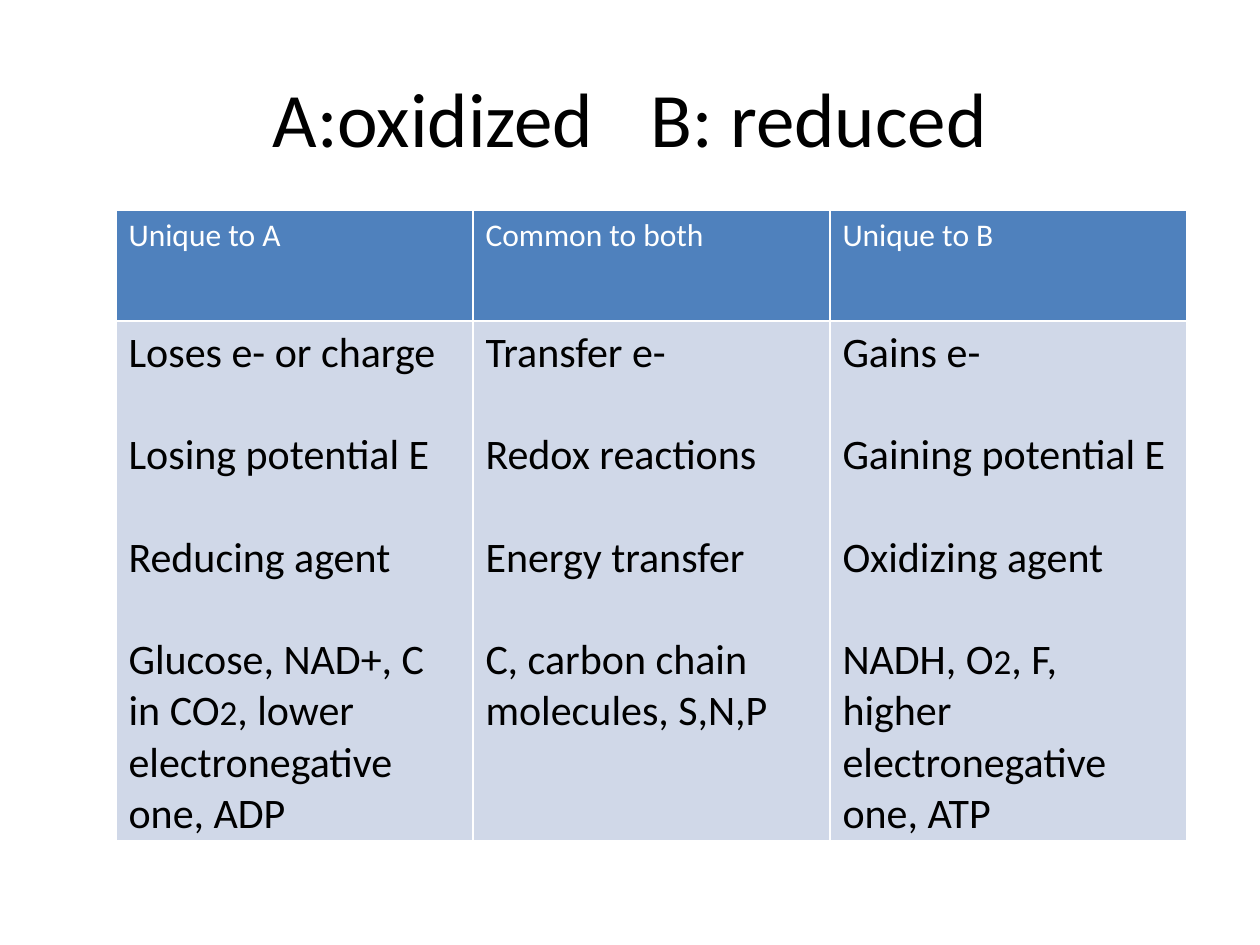
from dataclasses import dataclass

from pptx import Presentation
from pptx.dml.color import RGBColor
from pptx.enum.text import MSO_ANCHOR as Anchor, PP_ALIGN as Align
from pptx.util import Emu, Pt

PX_PER_INCH = 126
FONT = "Calibri"
BLACK, WHITE = "000000", "FFFFFF"
HEADER_FILL, BODY_FILL = "4F81BD", "D0D8E8"
HEADER_SIZE, BODY_SIZE, DIGIT_SIZE = 18, 24, 20
BODY_GAP = 29.3
COLUMN_WIDTH = 357
ROW_HEIGHTS = (111, 519)


@dataclass
class Column:
    heading: str
    points: list[str]


COLUMNS = [
    Column("Unique to A", [
        "Loses e- or charge",
        "Losing potential E",
        "Reducing agent",
        "Glucose, NAD+, C in CO2, lower electronegative one, ADP",
    ]),
    Column("Common to both", [
        "Transfer e-",
        "Redox reactions",
        "Energy transfer",
        "C, carbon chain molecules, S,N,P",
    ]),
    Column("Unique to B", [
        "Gains e-",
        "Gaining potential E",
        "Oxidizing agent",
        "NADH, O2, F, higher electronegative one, ATP",
    ]),
]


def px(length: int) -> Emu:
    return Emu(round(length * 914400 / PX_PER_INCH))


def color(value: str) -> RGBColor:
    return RGBColor.from_string(value)


def format_span(span, size: int, ink: str) -> None:
    span.font.name = FONT
    span.font.size = Pt(size)
    span.font.bold = False
    span.font.color.rgb = color(ink)


def fill_cell(cell, fill: str) -> None:
    cell.fill.solid()
    cell.fill.fore_color.rgb = color(fill)


def draw_title(page, text: str) -> None:
    box = page.shapes.add_textbox(px(63), px(38), px(1134), px(157))
    frame = box.text_frame
    frame.word_wrap = True
    frame.vertical_anchor = Anchor.MIDDLE
    frame.text = text
    para = frame.paragraphs[0]
    para.alignment = Align.CENTER
    for span in para.runs:
        format_span(span, 44, BLACK)


def write_heading(cell, text: str) -> None:
    fill_cell(cell, HEADER_FILL)
    cell.text_frame.text = text
    format_span(cell.text_frame.paragraphs[0].runs[0], HEADER_SIZE, WHITE)


def write_points(cell, points: list[str]) -> None:
    fill_cell(cell, BODY_FILL)
    frame = cell.text_frame
    frame.text = "\n".join(points)
    for para, point in zip(frame.paragraphs, points):
        before, digit, after = point.partition("2")
        para.text = before
        for part in filter(None, (digit, after)):
            para.add_run().text = part
        for span in para.runs:
            format_span(span, DIGIT_SIZE if span.text == "2" else BODY_SIZE, BLACK)
    for para in frame.paragraphs[:-1]:
        para.space_after = Pt(BODY_GAP)


def draw_table(page, columns: list[Column]) -> None:
    table = page.shapes.add_table(
        len(ROW_HEIGHTS), len(columns), px(116), px(210),
        px(COLUMN_WIDTH * len(columns)), px(sum(ROW_HEIGHTS)),
    ).table
    for row, height in zip(table.rows, ROW_HEIGHTS):
        row.height = px(height)
    for index, column in enumerate(columns):
        table.columns[index].width = px(COLUMN_WIDTH)
        write_heading(table.cell(0, index), column.heading)
        write_points(table.cell(1, index), column.points)


def main() -> None:
    deck = Presentation()
    deck.slide_width, deck.slide_height = px(1260), px(945)
    page = deck.slides.add_slide(deck.slide_layouts[6])
    draw_title(page, "A:oxidized \tB: reduced")
    draw_table(page, COLUMNS)
    deck.save("out.pptx")


if __name__ == "__main__":
    main()
